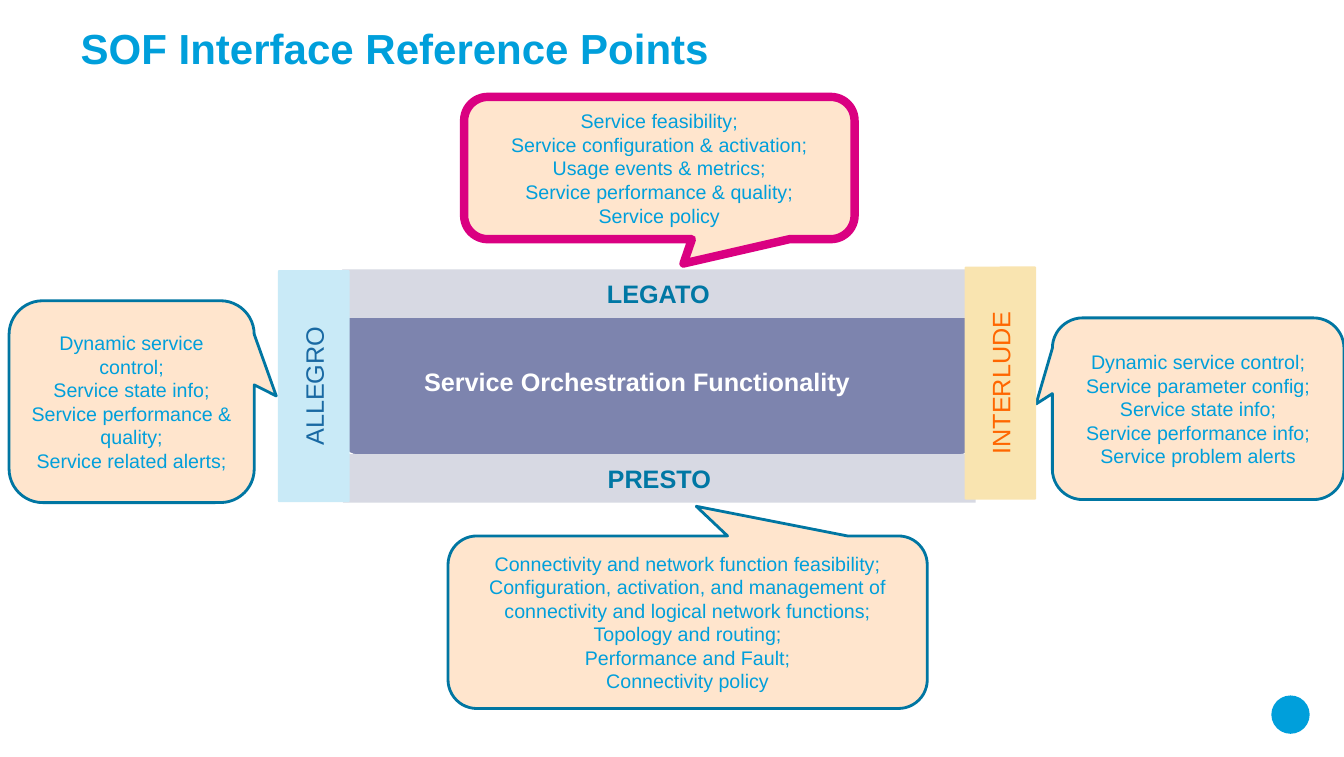
from dataclasses import dataclass
from lxml import etree
from pptx import Presentation
from pptx.dml.color import RGBColor
from pptx.enum import shapes, text
from pptx.oxml import ns
from pptx.util import Inches, Pt


@dataclass(frozen=True)
class Theme:
    font: str = "Arial"
    title_size: int = 30
    label_size: int = 18
    note_size: int = 14
    sky: str = "009FDB"
    white: str = "FFFFFF"
    core: str = "616A9D"
    peach: str = "FFE3C8"
    outline: str = "0076A2"
    magenta: str = "DA0081"
    band: str = "D7D9E3"
    band_text: str = "0077A4"
    allegro: str = "C9EAF7"
    allegro_text: str = "1969A3"
    interlude: str = "F9E4B0"
    interlude_text: str = "FF6600"


theme = Theme()
kinds = shapes.MSO_SHAPE


def write(shape, words, size, color, bold=False, align=text.PP_ALIGN.CENTER):
    frame = shape.text_frame
    frame.word_wrap = True
    frame.vertical_anchor = text.MSO_ANCHOR.MIDDLE
    frame.text = words
    for paragraph in frame.paragraphs:
        paragraph.alignment = align
        for run in paragraph.runs:
            run.font.name = theme.font
            run.font.size = Pt(size)
            run.font.bold = bold
            run.font.color.rgb = RGBColor.from_string(color)


def add_box(kind, place, adjustments, fill, line=None, width=0, opacity=100):
    shape = slide.shapes.add_shape(kind, *(Inches(v) for v in place))
    shape.shadow.inherit = False
    for index, value in enumerate(adjustments):
        shape.adjustments[index] = value
    shape.fill.solid()
    shape.fill.fore_color.rgb = RGBColor.from_string(fill)
    if opacity < 100:
        color = shape._element.spPr.find(ns.qn("a:solidFill"))[0]
        etree.SubElement(color, ns.qn("a:alpha")).set("val", str(opacity * 1000))
    if line:
        shape.line.color.rgb = RGBColor.from_string(line)
        shape.line.width = Pt(width)
    else:
        shape.line.fill.background()
    return shape


deck = Presentation()
deck.slide_width, deck.slide_height = Inches(13.32), Inches(7.5)
slide = deck.slides.add_slide(deck.slide_layouts[5])

# Title
title = slide.shapes.title
title.left, title.top = Inches(0.8), Inches(0.1)
title.width, title.height = Inches(11.72), Inches(0.85)
write(title, "SOF Interface Reference Points", theme.title_size, theme.sky,
      bold=True, align=text.PP_ALIGN.LEFT)
frame = title.text_frame
frame.margin_left = frame.margin_top = frame.margin_right = frame.margin_bottom = 0
frame.paragraphs[0].line_spacing = Pt(28.8)

# Plain disc in the corner
add_box(kinds.OVAL, (12.6, 6.89, 0.38, 0.38), (), theme.sky)

# Orchestration core
core = add_box(kinds.ROUNDED_RECTANGLE, (3.39, 3.08, 6.27, 1.43), (0.106,),
               theme.core, theme.white, 1.25, opacity=82)
write(core, "Service Orchestration Functionality", theme.label_size, theme.white,
      bold=True, align=text.PP_ALIGN.LEFT)
core_line = core.text_frame.paragraphs[0]
core_line.line_spacing = 0.9
core_line._p.get_or_add_pPr().set("marL", str(Inches(0.67)))

# Callouts: place, pointer tip, outline, width, lines
callouts = [
    ((0.09, 2.98, 2.43, 2), (0.59, -0.028), theme.outline, 2,
     ["Dynamic service control;", "Service state info;",
      "Service performance & quality;", "Service related alerts;"]),
    ((10.43, 3.15, 2.89, 1.8), (-0.556, -0.026), theme.outline, 2,
     ["Dynamic service control;", "Service parameter config;",
      "Service state info;", "Service performance info;",
      "Service problem alerts"]),
    ((4.6, 0.96, 3.87, 1.41), (0.062, 0.671), theme.magenta, 6,
     ["Service feasibility;", "Service configuration & activation;",
      "Usage events & metrics;", "Service performance & quality;",
      "Service policy"]),
    ((4.44, 5.31, 4.75, 1.71), (0.018, -0.672), theme.outline, 2,
     ["Connectivity and network function feasibility;",
      "Configuration, activation, and management of connectivity "
      "and logical network functions;",
      "Topology and routing;", "Performance and Fault;",
      "Connectivity policy"]),
]
for place, tip, outline, width, lines in callouts:
    callout = add_box(kinds.ROUNDED_RECTANGULAR_CALLOUT, place, (*tip, 0.167),
                      theme.peach, outline, width, opacity=90)
    write(callout, "\n".join(lines), theme.note_size, theme.sky)

# Interface bands: horizontal above and below, vertical at the sides
bands = [
    ("LEGATO", (3.39, 2.67, 6.27, 0.48), 0, 0.008, theme.band, theme.band_text),
    ("PRESTO", (3.4, 4.5, 6.27, 0.48), 0, 0.008, theme.band, theme.band_text),
    ("ALLEGRO", (1.96, 3.47, 2.3, 0.71), 270, 0.02, theme.allegro, theme.allegro_text),
    ("INTERLUDE", (8.76, 3.44, 2.31, 0.71), 270, 0.02, theme.interlude,
     theme.interlude_text),
]
for name, place, rotation, corner, fill, color in bands:
    band = add_box(kinds.ROUNDED_RECTANGLE, place, (corner,), fill)
    band.rotation = rotation
    write(band, name, theme.label_size, color, bold=rotation == 0)

deck.save("out.pptx")
